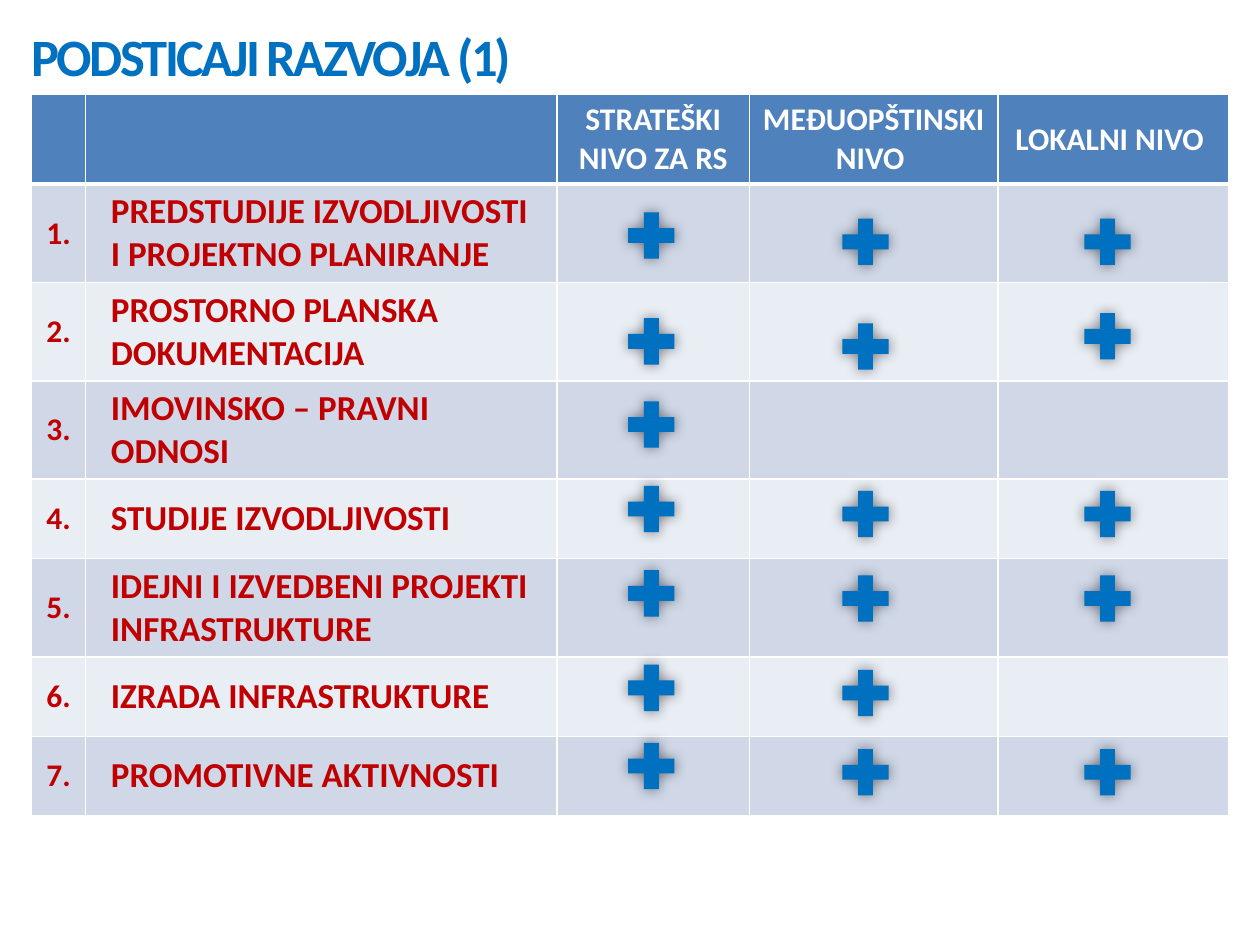
import pptx
import pptx.util
import pptx.dml.color
import pptx.enum.shapes
import pptx.enum.text
import pptx.oxml
import pptx.oxml.ns
from lxml import etree

Inches = pptx.util.Inches
Pt = pptx.util.Pt
RGBColor = pptx.dml.color.RGBColor
ALIGN = pptx.enum.text.PP_ALIGN
ANCHOR = pptx.enum.text.MSO_ANCHOR

BLUE = RGBColor(0x00, 0x70, 0xC0)
HEADER_BLUE = RGBColor(0x4F, 0x81, 0xBD)
BANDS = [RGBColor(0xD0, 0xD8, 0xE8), RGBColor(0xE9, 0xED, 0xF4)]
RED = RGBColor(0xC0, 0x00, 0x00)
WHITE = RGBColor(0xFF, 0xFF, 0xFF)
BLACK = RGBColor(0x00, 0x00, 0x00)

FONT = "Calibri"
MARGIN = 0.25
COLUMN_WIDTHS = [0.43, 3.74, 1.53, 1.97, 1.83]
ROW_HEIGHT = 0.63
PLUS_SIZE = 0.5

ROWS = [
    ["", "", "STRATEŠKI NIVO ZA RS", "MEĐUOPŠTINSKI NIVO ", "LOKALNI NIVO "],
    ["1.", "PREDSTUDIJE IZVODLJIVOSTI I PROJEKTNO PLANIRANJE"],
    ["2.", "PROSTORNO PLANSKA DOKUMENTACIJA"],
    ["3.", "IMOVINSKO – PRAVNI ODNOSI"],
    ["4.", "STUDIJE IZVODLJIVOSTI"],
    ["5. ", "IDEJNI I IZVEDBENI PROJEKTI INFRASTRUKTURE"],
    ["6. ", "IZRADA INFRASTRUKTURE"],
    ["7. ", "PROMOTIVNE AKTIVNOSTI"],
]

# Left edge of each level's column of plus signs, and their tops
PLUS_TOPS = {
    4.92: [1.62, 2.46, 3.12, 3.79, 4.46, 5.21, 5.83],
    6.62: [1.67, 2.5, 3.83, 4.5, 5.25, 5.88],
    8.54: [1.67, 2.42, 3.83, 4.5, 5.88],
}


def sub_element(parent, tag, **attributes):
    return etree.SubElement(parent, pptx.oxml.ns.qn(tag), **attributes)


def format_text(paragraph, size, color, alignment):
    paragraph.alignment = alignment
    for run in paragraph.runs:
        run.font.name = FONT
        run.font.size = Pt(size)
        run.font.bold = True
        run.font.color.rgb = color


def add_title(slide):
    title = slide.shapes.title
    title.left, title.top = Inches(MARGIN), Inches(MARGIN)
    title.width, title.height = Inches(4.17), Inches(0.45)
    frame = title.text_frame
    frame.text = "PODSTICAJI RAZVOJA (1)"
    frame.auto_size = pptx.enum.text.MSO_AUTO_SIZE.NONE
    frame.word_wrap = True
    frame.vertical_anchor = ANCHOR.MIDDLE
    frame.margin_left = frame.margin_right = 0
    frame.margin_top = frame.margin_bottom = 0
    paragraph = frame.paragraphs[0]
    paragraph.line_spacing = 0.9
    format_text(paragraph, 30, BLUE, ALIGN.LEFT)
    paragraph.runs[0].font._element.set("spc", "-150")


def set_borders(cell, top, bottom):
    properties = cell._tc.get_or_add_tcPr()
    widths = {"a:lnL": 1, "a:lnR": 1, "a:lnT": top, "a:lnB": bottom}
    for index, (tag, width) in enumerate(widths.items()):
        line = sub_element(properties, tag, w=str(Pt(width)))
        sub_element(sub_element(line, "a:solidFill"), "a:srgbClr", val=str(WHITE))
        properties.insert(index, line)  # borders come before the fill


def format_cell(cell, row, column):
    is_header = row == 0
    is_activity = column == 1 and not is_header
    cell.fill.solid()
    cell.fill.fore_color.rgb = HEADER_BLUE if is_header else BANDS[(row - 1) % 2]
    set_borders(cell, top=3 if row == 1 else 1, bottom=3 if is_header else 1)
    cell.vertical_anchor = ANCHOR.MIDDLE
    if is_activity:
        cell.margin_left = cell.margin_right = Inches(0.2)
    format_text(
        cell.text_frame.paragraphs[0],
        20 if is_activity else 18,
        WHITE if is_header else RED,
        ALIGN.LEFT if is_activity else ALIGN.CENTER,
    )


def add_activity_table(slide):
    table = slide.shapes.add_table(
        len(ROWS), len(COLUMN_WIDTHS), Inches(MARGIN), Inches(0.75),
        Inches(sum(COLUMN_WIDTHS)), Inches(ROW_HEIGHT * len(ROWS)),
    ).table
    for column, width in zip(table.columns, COLUMN_WIDTHS):
        column.width = Inches(width)
    for row_index, texts in enumerate(ROWS):
        table.rows[row_index].height = Inches(ROW_HEIGHT)
        for column_index in range(len(COLUMN_WIDTHS)):
            cell = table.cell(row_index, column_index)
            if column_index < len(texts) and texts[column_index]:
                cell.text_frame.text = texts[column_index]
            format_cell(cell, row_index, column_index)


def add_plus(slide, left, top):
    plus = slide.shapes.add_shape(
        pptx.enum.shapes.MSO_SHAPE.MATH_PLUS,
        Inches(left), Inches(top), Inches(PLUS_SIZE), Inches(PLUS_SIZE),
    )
    plus.fill.solid()
    plus.fill.fore_color.rgb = BLUE
    plus.line.fill.background()
    # Soft shadow all around
    plus.shadow.inherit = False
    effects = plus._element.spPr.find(pptx.oxml.ns.qn("a:effectLst"))
    shadow = sub_element(effects, "a:outerShdw", blurRad=str(Pt(7.5)), dist="0",
                         dir="0", algn="ctr", rotWithShape="0")
    color = sub_element(shadow, "a:srgbClr", val=str(BLACK))
    sub_element(color, "a:alpha", val="50000")


def main():
    presentation = pptx.Presentation()
    presentation.slide_width = Inches(10)
    presentation.slide_height = Inches(7.5)
    slide = presentation.slides.add_slide(presentation.slide_layouts[5])

    add_title(slide)
    add_activity_table(slide)
    for left, tops in PLUS_TOPS.items():
        for top in tops:
            add_plus(slide, left, top)

    presentation.save("out.pptx")


if __name__ == "__main__":
    main()
